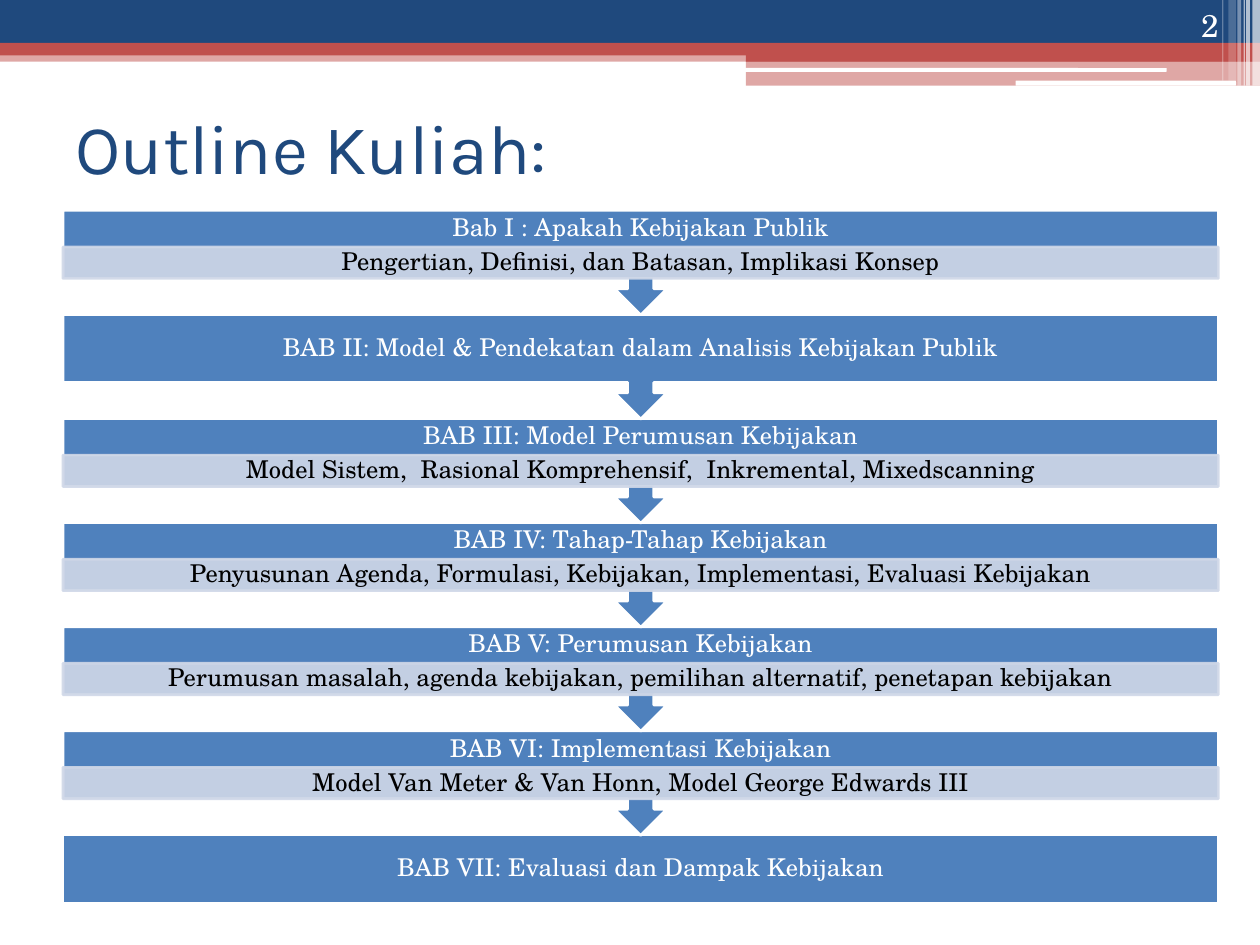
"""Build the course outline slide: a banner, a title and a chain of seven chapters."""
from typing import NamedTuple

from lxml import etree
from pptx import Presentation
from pptx import util as u
from pptx.dml.color import RGBColor
from pptx.enum import shapes, text
from pptx.oxml.ns import qn

COLORS = {
    "navy": "1F497D",
    "red": "C0504D",
    "blue": "4F81BD",
    "pale": "D0D8E8",
    "white": "FFFFFF",
    "black": "000000",
}
BODY_FONT = "TeX Gyre Schola"
RECTANGLE = shapes.MSO_SHAPE.RECTANGLE
ROUNDED = shapes.MSO_SHAPE.ROUNDED_RECTANGLE
CHAIN_LEFT, CHAIN_TOP, CHAIN_WIDTH = 0.5, 1.67, 9.17
STEP, CALLOUT_HEIGHT, BOX_HEIGHT = 0.826, 0.83, 0.54
HEADING_HEIGHT, DETAIL_HEIGHT = 0.29, 0.25


class Box(NamedTuple):
    left: float
    top: float
    width: float
    height: float

    def lengths(self) -> list:
        return [u.Inches(value) for value in self]


class Band(NamedTuple):
    box: Box
    color: str
    opacity: int = 100
    kind: int = RECTANGLE


class Chapter(NamedTuple):
    heading: str
    detail: str = ""


BANDS = [
    Band(Box(0, 0.4, 10, 0.09), "red", 50),
    Band(Box(0, 0, 10, 0.34), "navy"),
    Band(Box(0, 0.34, 10, 0.1), "red"),
    Band(Box(5.92, 0.39, 4.08, 0.1), "red"),
    Band(Box(5.92, 0.48, 4.08, 0.2), "red", 50),
    Band(Box(5.91, 0.54, 3.35, 0.03), "white", kind=ROUNDED),
    Band(Box(8.06, 0.64, 1.75, 0.04), "white", kind=ROUNDED),
    Band(Box(9.94, 0, 0.06, 0.68), "white", 65),
    Band(Box(9.89, 0, 0.03, 0.68), "white", 65),
    Band(Box(9.87, 0, 0.01, 0.68), "white", 60),
    Band(Box(9.82, 0, 0.03, 0.68), "white", 40),
    Band(Box(9.75, 0, 0.06, 0.64), "white", 20),
    Band(Box(9.7, 0, 0.01, 0.64), "white", 30),
]
CHAPTERS = [
    Chapter("Bab I : Apakah Kebijakan Publik", "Pengertian, Definisi, dan Batasan, Implikasi Konsep"),
    Chapter("BAB II: Model & Pendekatan dalam Analisis Kebijakan Publik"),
    Chapter("BAB III: Model Perumusan Kebijakan", "Model Sistem,  Rasional Komprehensif,  Inkremental, Mixedscanning"),
    Chapter("BAB IV: Tahap-Tahap Kebijakan", "Penyusunan Agenda, Formulasi, Kebijakan, Implementasi, Evaluasi Kebijakan"),
    Chapter("BAB V: Perumusan Kebijakan", "Perumusan masalah, agenda kebijakan, pemilihan alternatif, penetapan kebijakan"),
    Chapter("BAB VI: Implementasi Kebijakan", "Model Van Meter & Van Honn, Model George Edwards III"),
    Chapter("BAB VII: Evaluasi dan Dampak Kebijakan"),
]


def paint(color_owner, color: str, opacity: int = 100) -> None:
    color_owner.solid()
    color_owner.fore_color.rgb = RGBColor.from_string(COLORS[color])
    if opacity < 100:
        element = color_owner._xPr.find(f".//{qn('a:srgbClr')}")
        etree.SubElement(element, qn("a:alpha"), val=str(opacity * 1000))


def add_panel(slide, kind: int, box: Box, color: str, opacity: int = 100, line: str = ""):
    shape = slide.shapes.add_shape(kind, *box.lengths())
    shape.shadow.inherit = False
    paint(shape.fill, color, opacity)
    if line:
        shape.line.width = u.Pt(1.5)
        paint(shape.line.fill, line, opacity)
    else:
        shape.line.fill.background()
    return shape


def write(shape, wording: str, *, size: float = 14, font: str = BODY_FONT, color: str = "white",
          align=text.PP_ALIGN.CENTER, anchor=text.MSO_ANCHOR.MIDDLE,
          spacing: float = 0.9, inset: float = 0.02) -> None:
    frame = shape.text_frame
    frame.word_wrap = True
    frame.auto_size = text.MSO_AUTO_SIZE.NONE
    frame.vertical_anchor = anchor
    frame.margin_left = frame.margin_right = u.Inches(0.1)
    frame.margin_top = frame.margin_bottom = u.Inches(inset)
    paragraph = frame.paragraphs[0]
    paragraph.alignment = align
    paragraph.line_spacing = spacing
    run = paragraph.add_run()
    run.text = wording
    run.font.size = u.Pt(size)
    run.font.name = font
    run.font.color.rgb = RGBColor.from_string(COLORS[color])


def add_chapter(slide, index: int, chapter: Chapter) -> None:
    top = CHAIN_TOP + index * STEP
    if index == len(CHAPTERS) - 1:
        box = Box(CHAIN_LEFT, top, CHAIN_WIDTH, BOX_HEIGHT)
        write(add_panel(slide, RECTANGLE, box, "blue", line="white"), chapter.heading)
        return
    box = Box(CHAIN_LEFT, top, CHAIN_WIDTH, CALLOUT_HEIGHT)
    callout = add_panel(slide, shapes.MSO_SHAPE.UP_ARROW_CALLOUT, box, "blue", line="white")
    callout.rotation = 180
    heading_height = HEADING_HEIGHT if chapter.detail else BOX_HEIGHT
    heading_box = Box(CHAIN_LEFT, top, CHAIN_WIDTH, heading_height)
    write(slide.shapes.add_textbox(*heading_box.lengths()), chapter.heading)
    if chapter.detail:
        detail_box = Box(CHAIN_LEFT, top + HEADING_HEIGHT, CHAIN_WIDTH, DETAIL_HEIGHT)
        strip = add_panel(slide, RECTANGLE, detail_box, "pale", 90, "pale")
        write(strip, chapter.detail, color="black")


def main() -> None:
    presentation = Presentation()
    presentation.slide_width, presentation.slide_height = u.Inches(10), u.Inches(7.5)
    slide = presentation.slides.add_slide(presentation.slide_layouts[5])
    for band in BANDS:
        add_panel(slide, band.kind, band.box, band.color, band.opacity)
    title = slide.shapes.title
    title.left, title.top, title.width, title.height = Box(0.5, 0.58, 9, 1.17).lengths()
    write(title, "Outline Kuliah:", size=40, font="Karla", color="navy",
          align=text.PP_ALIGN.LEFT, spacing=1.0, inset=0.05)
    for index, chapter in reversed(list(enumerate(CHAPTERS))):
        add_chapter(slide, index, chapter)
    number = slide.shapes.add_textbox(*Box(8.94, 0, 0.83, 0.4).lengths())
    write(number, "2", size=18, align=text.PP_ALIGN.RIGHT,
          anchor=text.MSO_ANCHOR.BOTTOM, spacing=1.0, inset=0.05)
    presentation.save("out.pptx")


if __name__ == "__main__":
    main()
